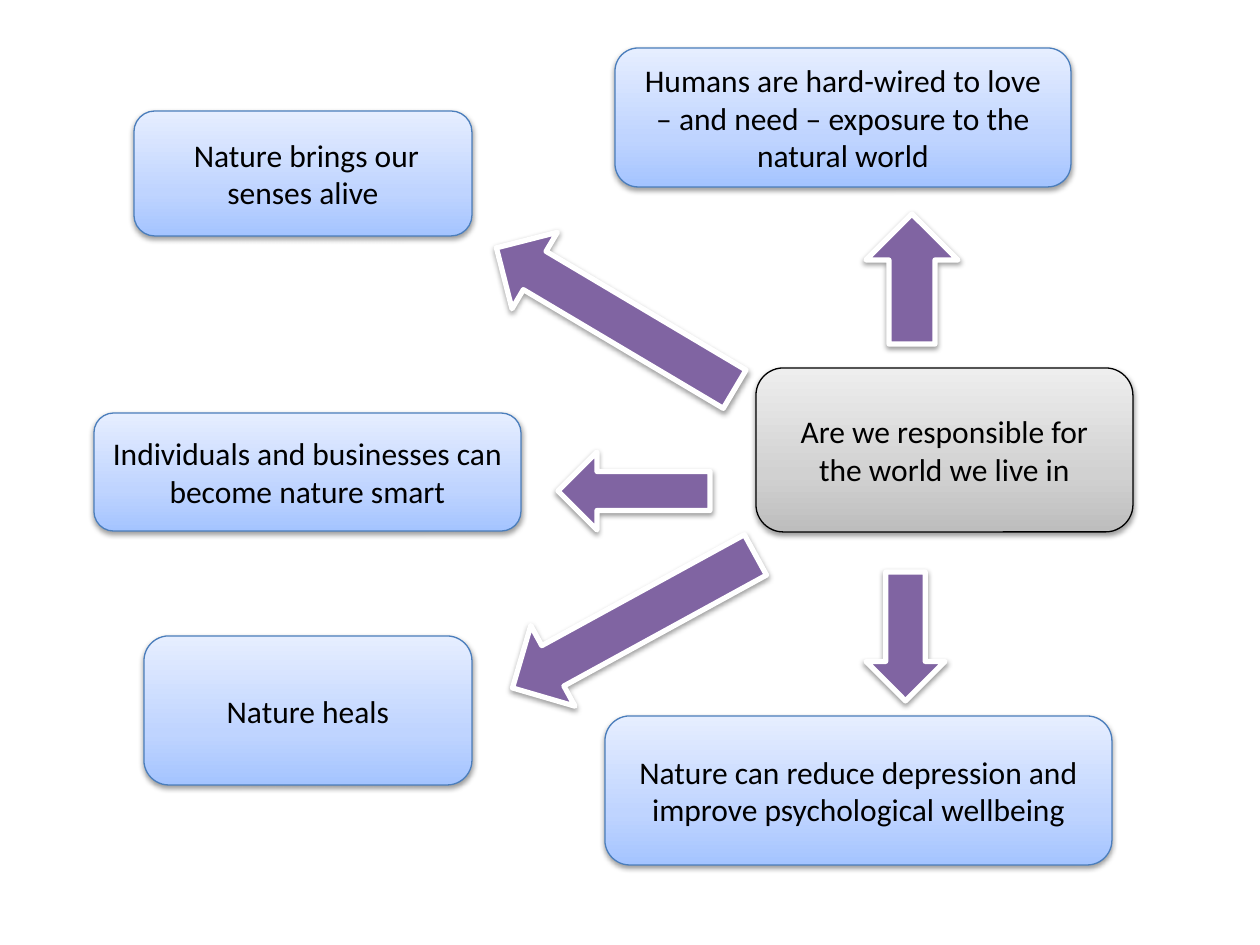
from lxml.etree import SubElement
from pptx import Presentation
from pptx.dml.color import RGBColor
from pptx.enum.shapes import MSO_SHAPE
from pptx.enum.text import MSO_ANCHOR, PP_ALIGN
from pptx.oxml.ns import qn
from pptx.util import Emu, Pt

PX_PER_INCH = 126
BLUE_STOPS = ((0, "A4C4FF"), (35, "BFD4FF"), (100, "E6EEFF"))
GREY_STOPS = ((0, "BDBDBD"), (35, "D1D1D1"), (100, "EEEEEE"))

QUESTION = ("Are we responsible for the world we live in", (756, 368, 377, 164))
ANSWERS = [
    (" Nature brings our senses alive", (134, 111, 338, 125)),
    ("Individuals and businesses can become nature smart", (94, 413, 427, 118)),
    ("Nature can reduce depression and improve psychological wellbeing",
     (605, 716, 507, 149)),
    ("Nature heals", (144, 636, 328, 149)),
    ("Humans are hard-wired to love – and need – exposure to the natural world",
     (615, 48, 456, 139)),
]
# Preset, place, rotation in degrees
ARROWS = [
    (MSO_SHAPE.DOWN_ARROW, (571, 180, 89, 277), 120.7),
    (MSO_SHAPE.DOWN_ARROW, (866, 572, 79, 129), 0),
    (MSO_SHAPE.DOWN_ARROW, (588, 483, 92, 277), 61.3),
    (MSO_SHAPE.LEFT_ARROW, (558, 452, 152, 78), 0),
    (MSO_SHAPE.UP_ARROW, (866, 214, 92, 130), 0),
]


def px(length):
    return Emu(round(length * 914400 / PX_PER_INCH))


def colour(hex_code):
    return RGBColor.from_string(hex_code)


def fill_gradient(shape, stops):
    """Fill from bottom to top with (percent, colour) stops."""
    shape.fill.gradient()
    gradient = shape._element.spPr.find(qn("a:gradFill"))
    for child in list(gradient):
        gradient.remove(child)
    stop_list = SubElement(gradient, qn("a:gsLst"))
    for percent, hex_code in stops:
        stop = SubElement(stop_list, qn("a:gs"), pos=str(percent * 1000))
        SubElement(stop, qn("a:srgbClr"), val=hex_code)
    SubElement(gradient, qn("a:lin"), ang=str(270 * 60000), scaled="0")


def add_soft_shadow(shape):
    shape.shadow.inherit = False
    effects = shape._element.spPr.find(qn("a:effectLst"))
    shadow = SubElement(effects, qn("a:outerShdw"), blurRad=str(Pt(3.1)),
                        dist=str(Pt(1.6)), dir=str(90 * 60000), rotWithShape="0")
    black = SubElement(shadow, qn("a:srgbClr"), val="000000")
    SubElement(black, qn("a:alpha"), val="38000")


def add_outlined(slide, preset, place, line, width):
    shape = slide.shapes.add_shape(preset, *map(px, place))
    shape.line.color.rgb = colour(line)
    shape.line.width = Pt(width)
    add_soft_shadow(shape)
    return shape


def write_text(shape, text, size=18, font="Calibri", ink="000000",
               align=PP_ALIGN.CENTER):
    frame = shape.text_frame
    frame.word_wrap = True
    frame.vertical_anchor = MSO_ANCHOR.MIDDLE
    paragraph = frame.paragraphs[0]
    paragraph.alignment = align
    run = paragraph.add_run()
    run.text = text
    run.font.size = Pt(size)
    run.font.name = font
    run.font.color.rgb = colour(ink)


def add_idea(slide, text, place, stops, line):
    idea = add_outlined(slide, MSO_SHAPE.ROUNDED_RECTANGLE, place, line, 0.75)
    fill_gradient(idea, stops)
    write_text(idea, text)


def add_arrow(slide, preset, place, rotation):
    arrow = add_outlined(slide, preset, place, "FFFFFF", 3)
    arrow.fill.solid()
    arrow.fill.fore_color.rgb = colour("8064A2")
    arrow.rotation = rotation


def main():
    deck = Presentation()
    deck.slide_width, deck.slide_height = px(1260), px(945)
    slide = deck.slides.add_slide(deck.slide_layouts[6])

    # Answers around the central question
    for text, place in ANSWERS:
        add_idea(slide, text, place, BLUE_STOPS, "4B7EBC")
    add_idea(slide, *QUESTION, GREY_STOPS, "000000")

    # Arrows from the question to each answer
    for preset, place, rotation in ARROWS:
        add_arrow(slide, preset, place, rotation)

    deck.save("out.pptx")


if __name__ == "__main__":
    main()
